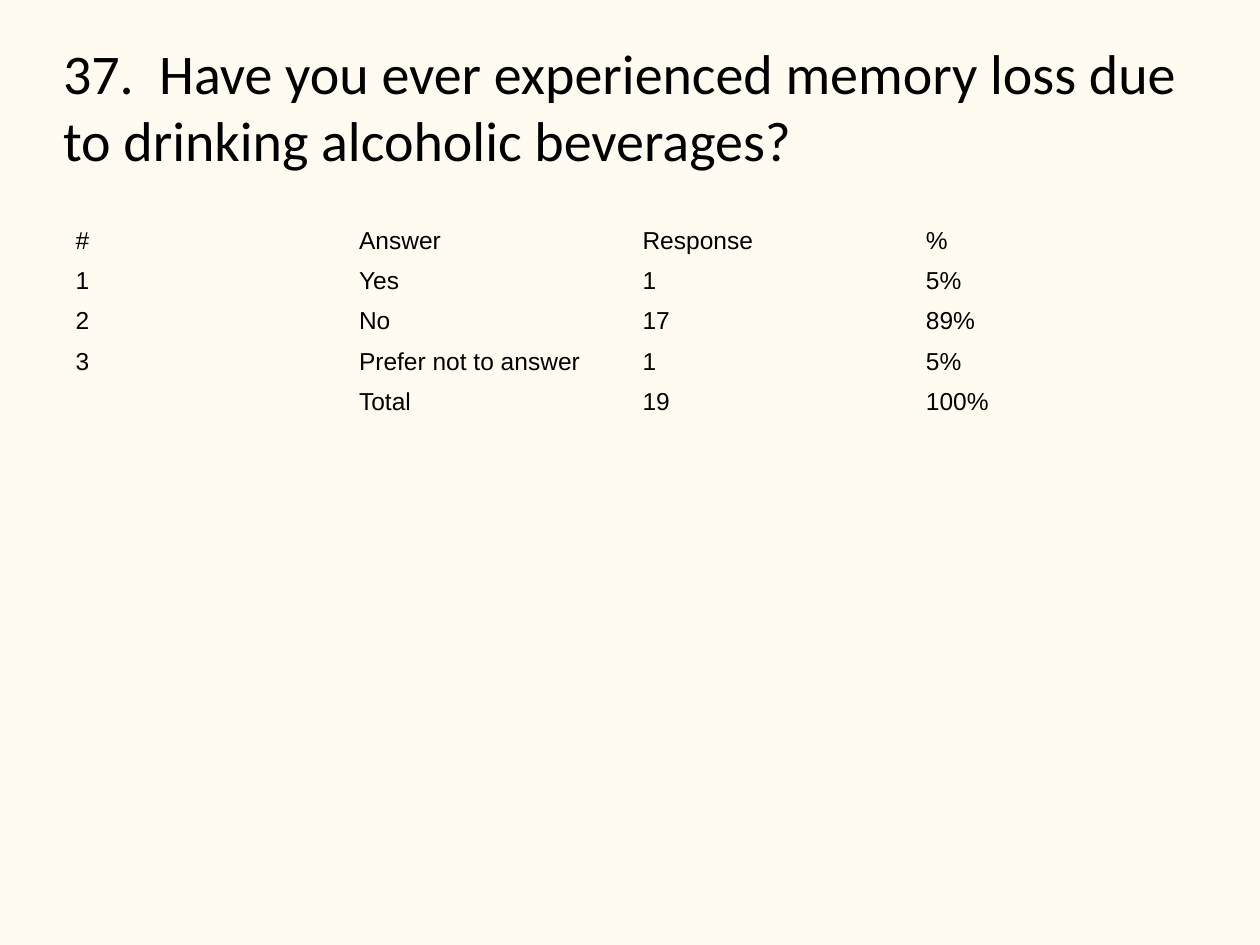
import lxml.etree
import pptx
import pptx.dml.color
import pptx.enum.text
import pptx.oxml.ns
import pptx.util

PX = 914400 // 126  # EMU per px
COLORS = {"background": "FFFBF0", "text": "000000"}
PLAIN_TABLE = "{2D5ABB26-0587-4C30-8999-92F81FD0307C}"  # no style, no grid

QUESTION = "37.  Have you ever experienced memory loss due to drinking alcoholic beverages?"
ANSWERS = [
    ("#", "Answer", "Response", "%"),
    ("1", "Yes", "1", "5%"),
    ("2", "No", "17", "89%"),
    ("3", "Prefer not to answer", "1", "5%"),
    ("", "Total", "19", "100%"),
]


def px(length):
    return pptx.util.Emu(length * PX)


def rgb(name):
    return pptx.dml.color.RGBColor.from_string(COLORS[name])


def add_xml(parent, tag, **attributes):
    return lxml.etree.SubElement(parent, pptx.oxml.ns.qn(tag), **attributes)


class SurveySlide:
    title_font, title_size = "Calibri", 32
    table_font, table_size = "Arial", 14

    def __init__(self, deck):
        self.slide = deck.slides.add_slide(deck.slide_layouts[5])
        background = self.slide.background.fill
        background.solid()
        background.fore_color.rgb = rgb("background")

    def style(self, paragraph, font, size):
        paragraph.alignment = pptx.enum.text.PP_ALIGN.LEFT
        paragraph.font.name = font
        paragraph.font.size = pptx.util.Pt(size)
        paragraph.font.color.rgb = rgb("text")

    def title(self, text, left, top, width, height):
        question = self.slide.shapes.title
        question.left, question.top = px(left), px(top)
        question.width, question.height = px(width), px(height)

        # Rounded rectangle with a corner radius of zero
        outline = add_xml(question.element.spPr, "a:prstGeom", prst="roundRect")
        add_xml(add_xml(outline, "a:avLst"), "a:gd", name="adj", fmla="val 0")

        frame = question.text_frame
        frame.text = text
        frame.word_wrap = True
        frame.auto_size = pptx.enum.text.MSO_AUTO_SIZE.NONE
        frame.vertical_anchor = pptx.enum.text.MSO_ANCHOR.TOP
        frame.margin_left = frame.margin_right = 0
        frame.margin_top = frame.margin_bottom = 0
        self.style(frame.paragraphs[0], self.title_font, self.title_size)

    def table(self, rows, left, top, width, row_height):
        answers = self.slide.shapes.add_table(
            len(rows), len(rows[0]), px(left), px(top),
            px(width), px(row_height * len(rows))).table
        answers.first_row = answers.horz_banding = False
        frame = answers.cell(0, 0)
        for style_id in self.slide.element.iter(pptx.oxml.ns.qn("a:tableStyleId")):
            style_id.text = PLAIN_TABLE
        for r, row in enumerate(rows):
            for c, text in enumerate(row):
                cell = answers.cell(r, c)
                cell.text = text
                cell.fill.background()
                self.style(cell.text_frame.paragraphs[0], self.table_font, self.table_size)


def main():
    deck = pptx.Presentation()
    deck.slide_width, deck.slide_height = px(1260), px(945)
    survey = SurveySlide(deck)

    # Survey question
    survey.title(QUESTION, 63, 38, 1134, 157)

    # Answer counts; the rows grow to fit their text
    survey.table(ANSWERS, 63, 221, 1134, 24)

    deck.save("out.pptx")


if __name__ == "__main__":
    main()
